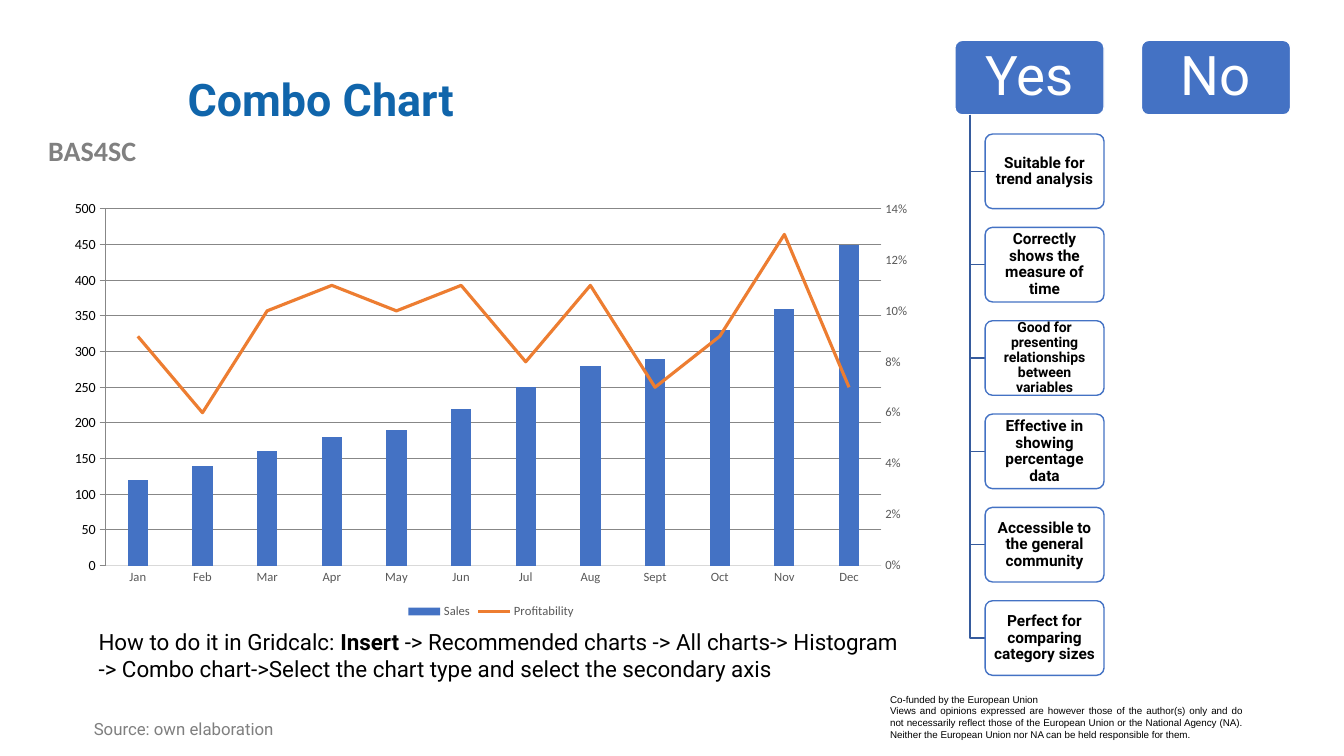
from dataclasses import dataclass

from pptx import Presentation
from pptx import oxml
from pptx import util as u
from pptx.chart import axis as chart_axis
from pptx.chart import data as chart_data
from pptx.dml import color
from pptx.enum import chart as chart_enum
from pptx.enum import shapes, text
from pptx.oxml import ns


@dataclass(frozen=True)
class Theme:
    heading: str = "1065AB"
    blue: str = "4472C4"
    branch: str = "365B9D"
    orange: str = "ED7D31"
    white: str = "FFFFFF"
    black: str = "000000"
    brand_grey: str = "808080"
    source_grey: str = "7F7F7F"
    axis_grey: str = "595959"
    axis_line: str = "D9D9D9"
    font: str = "Roboto"
    chart_font: str = "Calibri"
    notice_font: str = "Arial"
    title_size: float = 32
    verdict_size: float = 39
    brand_size: float = 20
    guide_size: float = 16
    source_size: float = 12
    reason_size: float = 11
    dense_size: float = 10
    chart_size: float = 9
    notice_size: float = 7


def rgb(value):
    return color.RGBColor.from_string(value)


def style_font(font, name, size, tint, bold=False):
    font.name, font.size, font.bold = name, u.Pt(size), bold
    font.color.rgb = rgb(tint)


def write(frame, paragraphs, *, font, size, tint, bold=False, align="LEFT",
          anchor="TOP", spacing=1.0, insets=(0.1, 0.05)):
    frame.word_wrap = True
    frame.auto_size = text.MSO_AUTO_SIZE.NONE
    frame.vertical_anchor = getattr(text.MSO_ANCHOR, anchor)
    frame.margin_left = frame.margin_right = u.Inches(insets[0])
    frame.margin_top = frame.margin_bottom = u.Inches(insets[1])
    for number, runs in enumerate(paragraphs):
        paragraph = frame.add_paragraph() if number else frame.paragraphs[0]
        paragraph.alignment = getattr(text.PP_ALIGN, align)
        paragraph.line_spacing = spacing
        paragraph.space_before = u.Pt(0)
        for words, strong in runs:
            run = paragraph.add_run()
            run.text = words
            style_font(run.font, font, size, tint, bold or strong)


class SlideBuilder:
    def __init__(self, slide, theme):
        self.slide = slide
        self.theme = theme

    def placeholder(self, holder, box, words, **style):
        holder.left, holder.top, holder.width, holder.height = map(u.Inches, box)
        properties = holder.text_frame.paragraphs[0]._p.get_or_add_pPr()
        properties.set("marL", "0")
        properties.set("indent", "0")
        properties.append(oxml.parse_xml(f"<a:buNone {ns.nsdecls('a')}/>"))
        write(holder.text_frame, [[(words, False)]], spacing=0.9, **style)

    def text_box(self, box, paragraphs, **style):
        label = self.slide.shapes.add_textbox(*map(u.Inches, box))
        write(label.text_frame, paragraphs, **style)
        return label

    def card(self, box, words, fill, line, opacity=None, **style):
        card = self.slide.shapes.add_shape(
            shapes.MSO_SHAPE.ROUNDED_RECTANGLE, *map(u.Inches, box))
        card.adjustments[0] = 0.1
        card.shadow.inherit = False
        card.fill.solid()
        card.fill.fore_color.rgb = rgb(fill)
        if opacity:
            tint = card.fill._xPr.find(".//" + ns.qn("a:srgbClr"))
            tint.append(oxml.parse_xml(
                f'<a:alpha {ns.nsdecls("a")} val="{opacity * 1000}"/>'))
        card.line.color.rgb = rgb(line)
        card.line.width = u.Pt(1)
        write(card.text_frame, [[(words, False)]], font=self.theme.font,
              align="CENTER", anchor="MIDDLE", spacing=0.9, **style)

    def elbow(self, left, top, right, bottom):
        outline = self.slide.shapes.build_freeform(u.Inches(left), u.Inches(top))
        outline.add_line_segments(
            [(u.Inches(left), u.Inches(bottom)), (u.Inches(right), u.Inches(bottom))],
            close=False)
        branch = outline.convert_to_shape()
        branch.shadow.inherit = False
        branch.fill.background()
        branch.line.color.rgb = rgb(self.theme.branch)
        branch.line.width = u.Pt(1)

    def style_axis(self, axis):
        axis.has_major_gridlines = False
        axis.major_tick_mark = axis.minor_tick_mark = chart_enum.XL_TICK_MARK.NONE
        style_font(axis.tick_labels.font, self.theme.chart_font,
                   self.theme.chart_size, self.theme.axis_grey)
        axis.format.line.fill.background()

    def add_right_axis(self, chart):
        area = chart._chartSpace.chart.plotArea
        bars = area.find(ns.qn("c:barChart"))
        rate = bars.findall(ns.qn("c:ser"))[1]
        for bar_only in rate.findall(ns.qn("c:invertIfNegative")):
            rate.remove(bar_only)
        lines = oxml.parse_xml(
            f'<c:lineChart {ns.nsdecls("c")}><c:grouping val="standard"/>'
            '<c:varyColors val="0"/><c:marker val="1"/>'
            '<c:axId val="5001"/><c:axId val="5002"/></c:lineChart>')
        lines.insert(2, rate)
        bars.addnext(lines)
        months = oxml.parse_xml(
            f'<c:catAx {ns.nsdecls("c")}><c:axId val="5001"/>'
            '<c:scaling><c:orientation val="minMax"/></c:scaling>'
            '<c:delete val="1"/><c:axPos val="b"/>'
            '<c:crossAx val="5002"/><c:crosses val="autoZero"/></c:catAx>')
        percent = oxml.parse_xml(
            f'<c:valAx {ns.nsdecls("c")}><c:axId val="5002"/>'
            '<c:scaling><c:orientation val="minMax"/></c:scaling>'
            '<c:delete val="0"/><c:axPos val="r"/>'
            '<c:numFmt formatCode="0%" sourceLinked="0"/>'
            '<c:tickLblPos val="nextTo"/>'
            '<c:crossAx val="5001"/><c:crosses val="max"/></c:valAx>')
        area.find(ns.qn("c:valAx")).addnext(percent)
        percent.addnext(months)
        return chart_axis.ValueAxis(percent)

    def combo_chart(self, box, months, sales, profitability):
        theme = self.theme
        figures = chart_data.CategoryChartData()
        figures.categories = months
        figures.add_series("Sales", sales)
        figures.add_series("Profitability", profitability, "0%")
        chart = self.slide.shapes.add_chart(
            chart_enum.XL_CHART_TYPE.COLUMN_CLUSTERED,
            *map(u.Inches, box), figures).chart
        chart.has_title = False
        style_font(chart.font, theme.chart_font, theme.dense_size, theme.black)
        chart.has_legend = True
        chart.legend.position = chart_enum.XL_LEGEND_POSITION.BOTTOM
        chart.legend.include_in_layout = False
        style_font(chart.legend.font, theme.chart_font, theme.chart_size, theme.axis_grey)

        percent_axis = self.add_right_axis(chart)
        for axis in (chart.category_axis, chart.value_axis, percent_axis):
            self.style_axis(axis)
        chart.category_axis.format.line.color.rgb = rgb(theme.axis_line)
        chart.category_axis.format.line.width = u.Pt(0.75)
        for axis, top, step in ((chart.value_axis, 500, 50), (percent_axis, 0.14, 0.02)):
            axis.minimum_scale, axis.maximum_scale, axis.major_unit = 0, top, step

        columns, trend = chart.plots
        columns.vary_by_categories = False
        columns.gap_width, columns.overlap = 219, -27
        columns.series[0].format.fill.solid()
        columns.series[0].format.fill.fore_color.rgb = rgb(theme.blue)
        rate = trend.series[0]
        rate.smooth = False
        rate.marker.style = chart_enum.XL_MARKER_STYLE.NONE
        rate.format.line.color.rgb = rgb(theme.orange)
        rate.format.line.width = u.Pt(2.25)


def main():
    theme = Theme()
    deck = Presentation()
    deck.slide_width, deck.slide_height = u.Inches(13.33), u.Inches(7.5)
    slide = deck.slides.add_slide(deck.slide_layouts[1])
    page = SlideBuilder(slide, theme)

    page.text_box((0, 1.28, 1.83, 0.44), [[("BAS4SC", True)]], font=theme.chart_font,
                  size=theme.brand_size, tint=theme.brand_grey, align="CENTER")
    notice = page.text_box(
        (8.73, 6.83, 3.69, 0.57),
        [[("Co-funded by the European Union", False)],
         [("Views and opinions expressed are however those of the author(s) only and do not "
           "necessarily reflect those of the European Union or the National Agency (NA). "
           "Neither the European Union nor NA can be held responsible for them.", False)]],
        font=theme.notice_font, size=theme.notice_size, tint=theme.black, align="JUSTIFY")
    notice.fill.solid()
    notice.fill.fore_color.rgb = rgb(theme.white)

    page.placeholder(slide.shapes.title, (1.76, 0.4, 10.66, 1.22), "Combo Chart",
                     font=theme.font, size=theme.title_size, tint=theme.heading,
                     bold=True, anchor="MIDDLE")
    page.placeholder(slide.placeholders[1], (0.83, 7.1, 5.01, 0.34),
                     "Source: own elaboration", font=theme.font,
                     size=theme.source_size, tint=theme.source_grey)

    for verdict, left in (("Yes", 9.47), ("No", 11.32)):
        page.card((left, 0.4, 1.48, 0.74), verdict, theme.blue, theme.white,
                  size=theme.verdict_size, tint=theme.white, insets=(0.08, 0.05))
    reasons = (
        ("Suitable for trend analysis", theme.reason_size),
        ("Correctly shows the measure of time", theme.reason_size),
        ("Good for presenting relationships between variables", theme.dense_size),
        ("Effective in showing percentage data", theme.reason_size),
        ("Accessible to the general community", theme.reason_size),
        ("Perfect for comparing category sizes", theme.reason_size),
    )
    first_top, last_top, height = 1.33, 5.96, 0.74
    pitch = (last_top - first_top) / (len(reasons) - 1)
    for row, (reason, size) in enumerate(reasons):
        top = first_top + row * pitch
        page.elbow(9.62, 1.14, 9.77, top + height / 2)
        page.card((9.77, top, 1.18, height), reason, theme.white, theme.blue, opacity=90,
                  size=size, tint=theme.black, bold=True, insets=(0.02, 0.01))

    page.text_box(
        (0.88, 6.18, 8.3, 0.64),
        [[("How to do it in Gridcalc: ", False), ("Insert ", True),
          ("-> Recommended charts -> All charts-> Histogram -> Combo chart->"
           "Select the chart type and select the secondary axis", False)]],
        font=theme.font, size=theme.guide_size, tint=theme.black)
    page.combo_chart(
        (0.57, 1.91, 8.6, 4.27),
        "Jan Feb Mar Apr May Jun Jul Aug Sept Oct Nov Dec".split(),
        (120, 140, 160, 180, 190, 220, 250, 280, 290, 330, 360, 450),
        (0.09, 0.06, 0.1, 0.11, 0.1, 0.11, 0.08, 0.11, 0.07, 0.09, 0.13, 0.07))
    deck.save("out.pptx")


if __name__ == "__main__":
    main()
